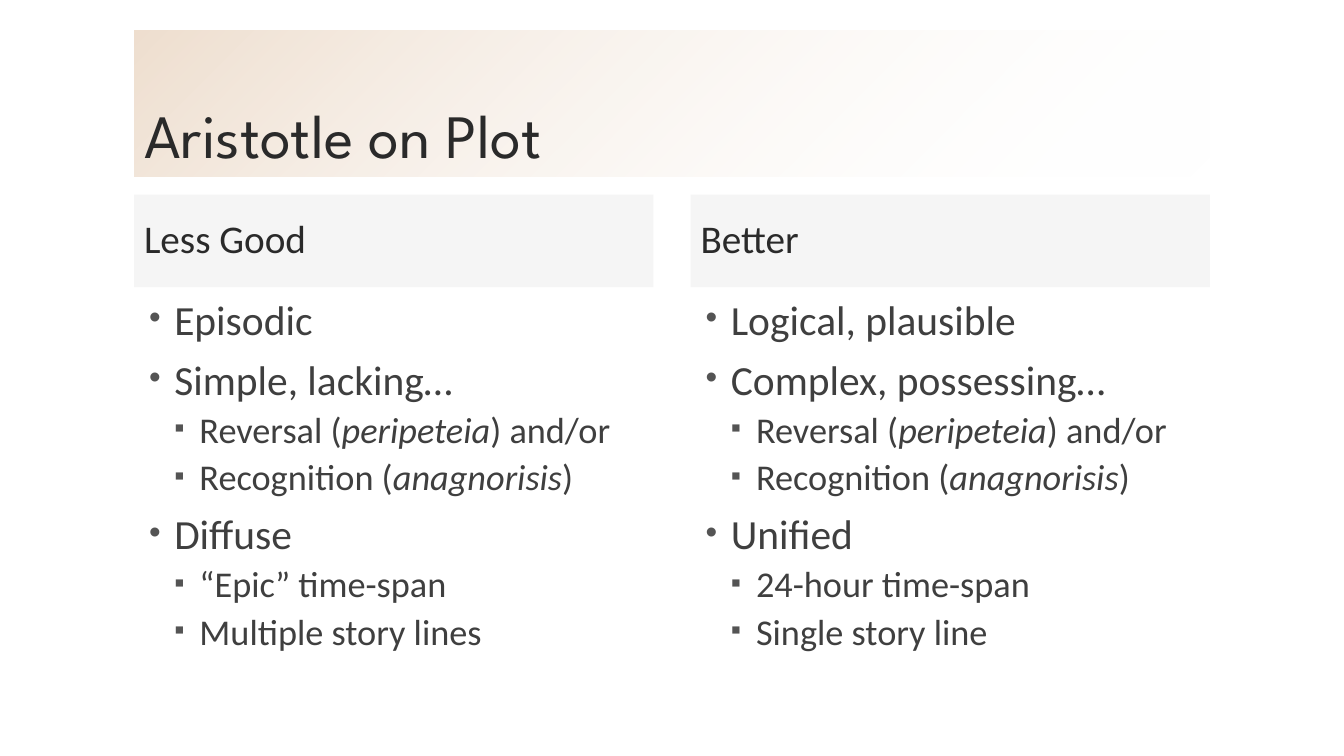
from dataclasses import dataclass

from lxml.etree import SubElement
from pptx import Presentation
from pptx.dml.color import RGBColor
from pptx.enum.shapes import MSO_SHAPE
from pptx.enum.text import MSO_ANCHOR, MSO_AUTO_SIZE, PP_ALIGN
from pptx.oxml.ns import qn
from pptx.util import Emu, Pt


@dataclass(frozen=True)
class Theme:
    heading_font: str = "League Spartan"
    body_font: str = "Calibri"
    heading_color: str = "2A2A2A"
    body_color: str = "3F3F3F"
    bullet_color: str = "545454"
    banner_color: str = "CE9F71"
    fade_color: str = "FFFFFF"
    header_color: str = "BFBFBF"
    title_size: float = 44
    header_size: float = 28
    item_sizes: tuple = (29.6, 25.9)
    item_spacing: tuple = (18, 12)
    bullets: tuple = ("•", "▪")


THEME = Theme()
EMU_PER_PX = 9144
LEFT, COLUMN_WIDTH, COLUMN_STEP = 133, 515, 552
INDENT, HANGING = 30, 25

# Each item is a level and its text pieces; every second piece is italic.
SHARED_DEVICES = [
    (1, ["Reversal (", "peripeteia", ") and/or"]),
    (1, ["Recognition (", "anagnorisis", ")"]),
]
COLUMNS = [
    ("Less Good", [
        (0, ["Episodic"]),
        (0, ["Simple, lacking…"]),
        *SHARED_DEVICES,
        (0, ["Diffuse"]),
        (1, ["“Epic” time-span"]),
        (1, ["Multiple story lines"]),
    ]),
    ("Better", [
        (0, ["Logical, plausible"]),
        (0, ["Complex, possessing…"]),
        *SHARED_DEVICES,
        (0, ["Unified"]),
        (1, ["24-hour time-span"]),
        (1, ["Single story line"]),
    ]),
]


def px(length):
    return Emu(length * EMU_PER_PX)


def rgb(color):
    return RGBColor.from_string(color)


def set_alphas(shape, *percents):
    """Give the fill colours of a shape their opacities, in order."""
    colors = shape.fill._xPr.iter(qn("a:srgbClr"))
    for color, percent in zip(colors, percents):
        SubElement(color, qn("a:alpha"), val=str(percent * 1000))


def add_span(para, text, font, size, color, italic=False):
    span = para.add_run()
    span.text = text
    span.font.name = font
    span.font.size = Pt(size)
    span.font.color.rgb = rgb(color)
    span.font.italic = italic


def write_heading(shape, text, font, size, anchor):
    frame = shape.text_frame
    frame.word_wrap = True
    frame.auto_size = MSO_AUTO_SIZE.NONE
    frame.vertical_anchor = anchor
    para = frame.paragraphs[0]
    para.alignment = PP_ALIGN.LEFT
    para.line_spacing = 0.9
    add_span(para, text, font, size, THEME.heading_color)


def place_title(page, text):
    title = page.shapes.title
    title.left, title.top = px(LEFT), px(30)
    title.width, title.height = px(1067), px(145)
    title.fill.gradient()
    title.fill.gradient_angle = 315
    stops = title.fill.gradient_stops
    for stop, color in zip(stops, (THEME.banner_color, THEME.fade_color)):
        stop.color.rgb = rgb(color)
    set_alphas(title, 34, 0)
    write_heading(title, text, THEME.heading_font, THEME.title_size,
                  MSO_ANCHOR.BOTTOM)


def add_header(page, left, text):
    header = page.shapes.add_shape(
        MSO_SHAPE.RECTANGLE, px(left), px(193), px(COLUMN_WIDTH), px(92))
    header.shadow.inherit = False
    header.line.fill.background()
    header.fill.solid()
    header.fill.fore_color.rgb = rgb(THEME.header_color)
    set_alphas(header, 15)
    write_heading(header, text, THEME.body_font, THEME.header_size,
                  MSO_ANCHOR.MIDDLE)


def set_bullet(para, level):
    properties = para._p.get_or_add_pPr()
    properties.set("marL", str(px(INDENT + HANGING * level)))
    properties.set("indent", str(-px(HANGING)))
    color = SubElement(properties, qn("a:buClr"))
    SubElement(color, qn("a:srgbClr"), val=THEME.bullet_color)
    SubElement(properties, qn("a:buSzPct"), val="80000")
    SubElement(properties, qn("a:buFont"), typeface="Arial")
    SubElement(properties, qn("a:buChar"), char=THEME.bullets[level])


def add_list(page, left, items):
    box = page.shapes.add_textbox(
        px(left), px(300), px(COLUMN_WIDTH), px(375))
    frame = box.text_frame
    frame.word_wrap = True
    for index, (level, pieces) in enumerate(items):
        para = frame.add_paragraph() if index else frame.paragraphs[0]
        para.level = level
        para.line_spacing = 0.7
        para.space_before = Pt(THEME.item_spacing[level])
        set_bullet(para, level)
        for position, piece in enumerate(pieces):
            add_span(para, piece, THEME.body_font, THEME.item_sizes[level],
                     THEME.body_color, italic=position % 2 == 1)


def main():
    deck = Presentation()
    deck.slide_width, deck.slide_height = px(1333), px(750)
    page = deck.slides.add_slide(deck.slide_layouts[5])
    place_title(page, "Aristotle on Plot")
    for index, (heading, items) in enumerate(COLUMNS):
        left = LEFT + index * COLUMN_STEP
        add_header(page, left, heading)
        add_list(page, left, items)
    deck.save("out.pptx")


if __name__ == "__main__":
    main()
